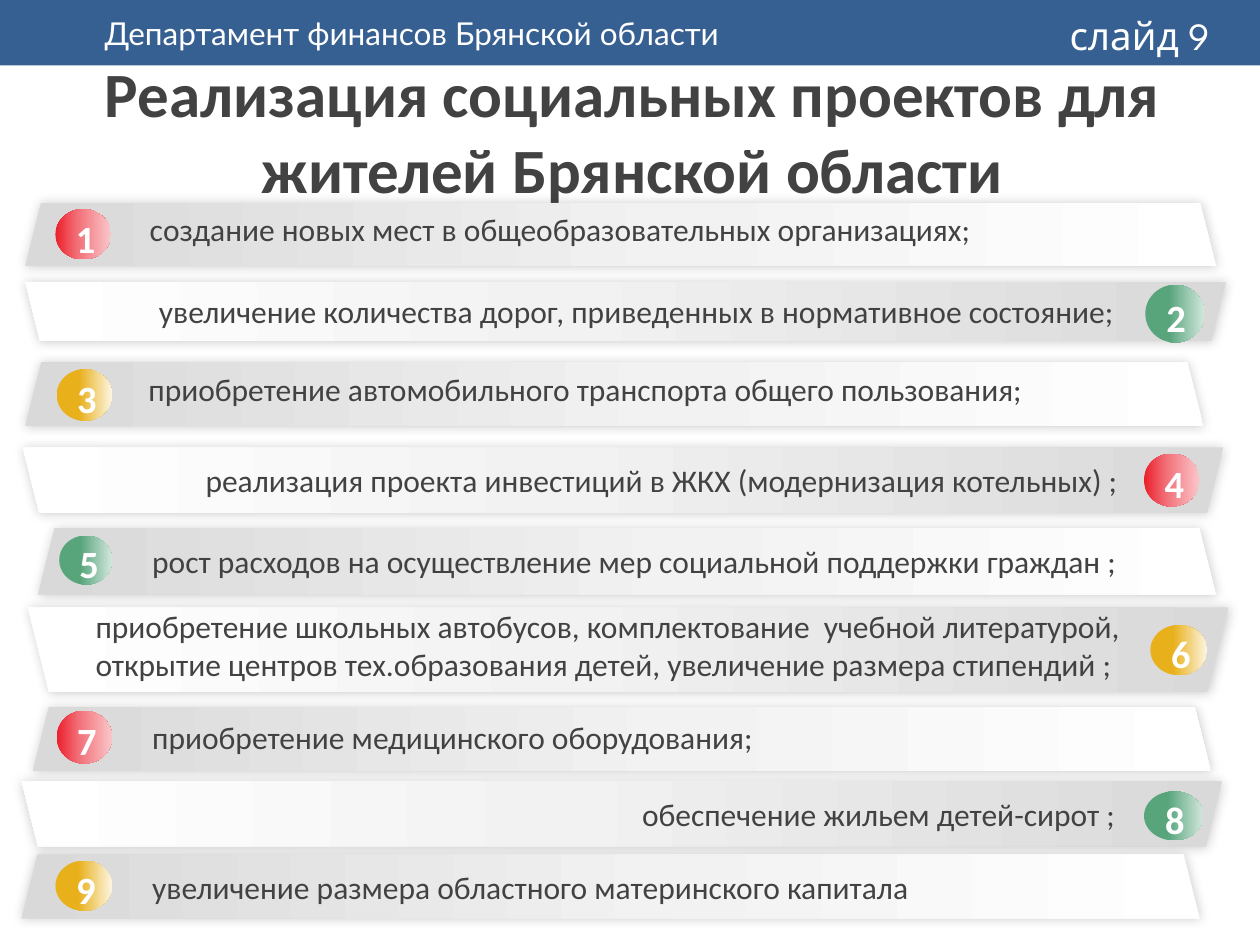
"""Build the slide on social projects for residents of the Bryansk region."""
from dataclasses import dataclass

from pptx import Presentation
from pptx.dml.color import RGBColor
from pptx.enum.shapes import MSO_SHAPE
from pptx.enum.text import MSO_ANCHOR, MSO_AUTO_SIZE, PP_ALIGN
from pptx.oxml import parse_xml
from pptx.oxml.ns import nsdecls, qn
from pptx.util import Inches, Pt

BAR, BADGE, HEADER = MSO_SHAPE.TRAPEZOID, MSO_SHAPE.OVAL, MSO_SHAPE.RECTANGLE
LEFT, CENTER, RIGHT = PP_ALIGN.LEFT, PP_ALIGN.CENTER, PP_ALIGN.RIGHT
TOP, MIDDLE = MSO_ANCHOR.TOP, MSO_ANCHOR.MIDDLE
NO_AUTOFIT = MSO_AUTO_SIZE.NONE

BLUE, WHITE, DARK = "376092", "FFFFFF", "424242"
Area = tuple[float, float, float, float]
Gradient = list[tuple[int, str]]
BAR_GRADIENT: Gradient = [(0, "D9D9D9"), (55, "F2F2F2"), (100, WHITE)]
BADGE_GRADIENTS: list[Gradient] = [
    [(0, "EB1F2B"), (40, "F27078"), (100, "FAC6C9")],
    [(0, "58A57C"), (40, "58A57C"), (100, "D2E7DC")],
    [(0, "E8B01B"), (40, "E8B01B"), (100, "FCF5E1")],
]


@dataclass
class TextStyle:
    size: int
    color: str
    name: str = "Calibri"
    bold: bool = False
    align: PP_ALIGN = LEFT
    anchor: MSO_ANCHOR = TOP
    line_spacing: float = 1.0


@dataclass
class Project:
    text: str
    bar: Area
    badge: Area
    label: Area
    align: PP_ALIGN = LEFT


PROJECTS = [
    Project("создание новых мест в общеобразовательных организациях;",
            (0.2, 1.61, 9.45, 0.5), (0.44, 1.66, 0.44, 0.4), (1.09, 1.62, 8.07, 0.4)),
    Project("увеличение количества дорог, приведенных в нормативное состояние;",
            (0.2, 2.24, 9.53, 0.47), (9.09, 2.26, 0.47, 0.46), (0.59, 2.27, 8.35, 0.4), RIGHT),
    Project("приобретение автомобильного транспорта общего пользования;",
            (0.2, 2.87, 9.35, 0.51), (0.45, 2.93, 0.44, 0.41), (1.08, 2.89, 8.07, 0.4)),
    Project("реализация проекта инвестиций в ЖКХ (модернизация котельных) ;",
            (0.18, 3.55, 9.53, 0.52), (9.08, 3.6, 0.44, 0.42), (0.67, 3.61, 8.3, 0.4), RIGHT),
    Project("рост расходов на осуществление мер социальной поддержки граждан ;",
            (0.3, 4.19, 9.35, 0.53), (0.47, 4.25, 0.42, 0.39), (1.11, 4.25, 8.02, 0.4)),
    Project("приобретение школьных автобусов, комплектование  учебной литературой, "
            "открытие центров тех.образования детей, увеличение размера стипендий ;",
            (0.22, 4.82, 9.53, 0.67), (9.13, 4.96, 0.45, 0.4), (0.66, 4.77, 8.62, 0.71)),
    Project("приобретение медицинского оборудования;",
            (0.26, 5.61, 9.35, 0.51), (0.45, 5.64, 0.44, 0.42), (1.11, 5.65, 8.07, 0.4)),
    Project("обеспечение жильем детей-сирот ;",
            (0.17, 6.2, 9.53, 0.52), (9.08, 6.28, 0.47, 0.39), (0.65, 6.26, 8.3, 0.4), RIGHT),
    Project("увеличение размера областного материнского капитала",
            (0.17, 6.78, 9.35, 0.51), (0.44, 6.83, 0.45, 0.4), (1.11, 6.84, 8.3, 0.4)),
]


def rgb(color: str) -> RGBColor:
    return RGBColor.from_string(color)


def place(area: Area) -> list[int]:
    return [Inches(length) for length in area]


def write(box, text: str, style: TextStyle) -> None:
    frame = box.text_frame
    frame_format = {"word_wrap": True, "auto_size": NO_AUTOFIT, "vertical_anchor": style.anchor}
    for attribute, value in frame_format.items():
        setattr(frame, attribute, value)
    paragraph = frame.paragraphs[0]
    paragraph.alignment = style.align
    paragraph.line_spacing = style.line_spacing
    span = paragraph.add_run()
    span.text = text
    font_format = {"name": style.name, "size": Pt(style.size), "bold": style.bold}
    for attribute, value in font_format.items():
        setattr(span.font, attribute, value)
    span.font.color.rgb = rgb(style.color)


def add_label(page, area: Area, text: str, style: TextStyle) -> None:
    write(page.shapes.add_textbox(*place(area)), text, style)


def add_plain_shape(page, kind: MSO_SHAPE, area: Area):
    shape = page.shapes.add_shape(kind, *place(area))
    shape.shadow.inherit = False
    shape.line.fill.background()
    return shape


def add_gradient_shape(page, kind: MSO_SHAPE, area: Area, gradient: Gradient):
    shape = add_plain_shape(page, kind, area)
    shape.fill.gradient()
    shape.fill.gradient_angle = 0
    stops = shape.element.spPr.find(".//" + qn("a:gsLst"))
    for stop in list(stops):
        stops.remove(stop)
    for position, color in gradient:
        stops.append(parse_xml(
            f'<a:gs {nsdecls("a")} pos="{position * 1000}"><a:srgbClr val="{color}"/></a:gs>'))
    return shape


def add_bar(page, area: Area, flipped: bool) -> None:
    bar = add_gradient_shape(page, BAR, area, BAR_GRADIENT)
    bar.rotation = 180 if flipped else 0
    bar.element.spPr.find(qn("a:effectLst")).append(parse_xml(
        f'<a:outerShdw {nsdecls("a")} blurRad="{Pt(6)}" dist="0" dir="18900000">'
        '<a:srgbClr val="000000"><a:alpha val="20000"/></a:srgbClr></a:outerShdw>'))


def add_header(page) -> None:
    header = add_plain_shape(page, HEADER, (0, 0, 10, 0.52))
    header.fill.solid()
    header.fill.fore_color.rgb = rgb(BLUE)
    header.text_frame.margin_left = Inches(0.83)
    write(header, "Департамент финансов Брянской области",
          TextStyle(18, WHITE, "Lato", anchor=MIDDLE))
    add_label(page, (8.39, 0.05, 1.5, 0.47), "слайд 9", TextStyle(22, WHITE, "League Spartan"))


def add_title(page) -> None:
    title = page.shapes.title
    title.left, title.top, title.width, title.height = place((0.14, 0.68, 9.76, 0.71))
    write(title, "Реализация социальных проектов для жителей Брянской области",
          TextStyle(36, DARK, bold=True, align=CENTER, anchor=MIDDLE))


def add_project(page, number: int, project: Project) -> None:
    add_bar(page, project.bar, flipped=number % 2 == 0)
    add_label(page, project.label, project.text, TextStyle(18, DARK, align=project.align))
    gradient = BADGE_GRADIENTS[(number - 1) % len(BADGE_GRADIENTS)]
    badge = add_gradient_shape(page, BADGE, project.badge, gradient)
    write(badge, str(number), TextStyle(22, WHITE, bold=True, align=CENTER,
                                        anchor=MIDDLE, line_spacing=1.15))


def main() -> None:
    deck = Presentation()
    deck.slide_width, deck.slide_height = Inches(10), Inches(7.5)
    page = deck.slides.add_slide(deck.slide_layouts.get_by_name("Title Only"))
    add_header(page)
    add_title(page)
    for number, project in enumerate(PROJECTS, 1):
        add_project(page, number, project)
    deck.save("out.pptx")


if __name__ == "__main__":
    main()
